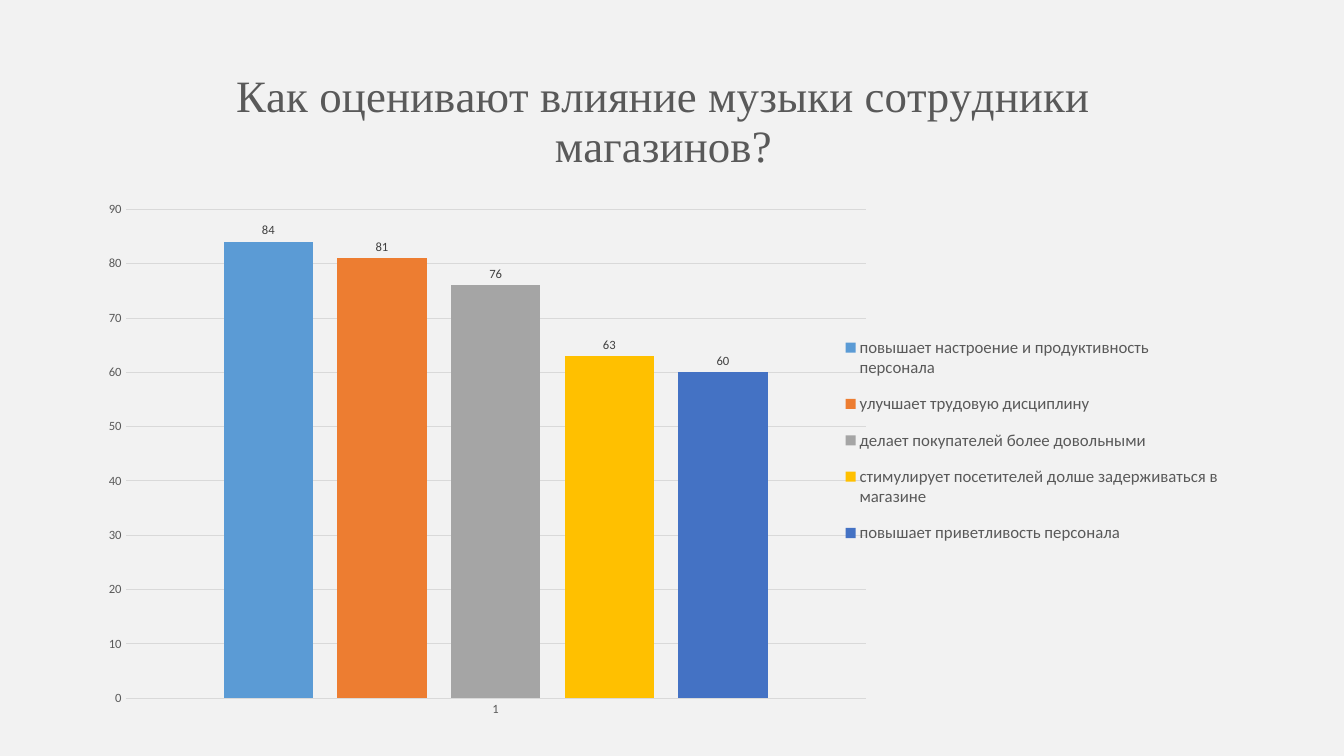
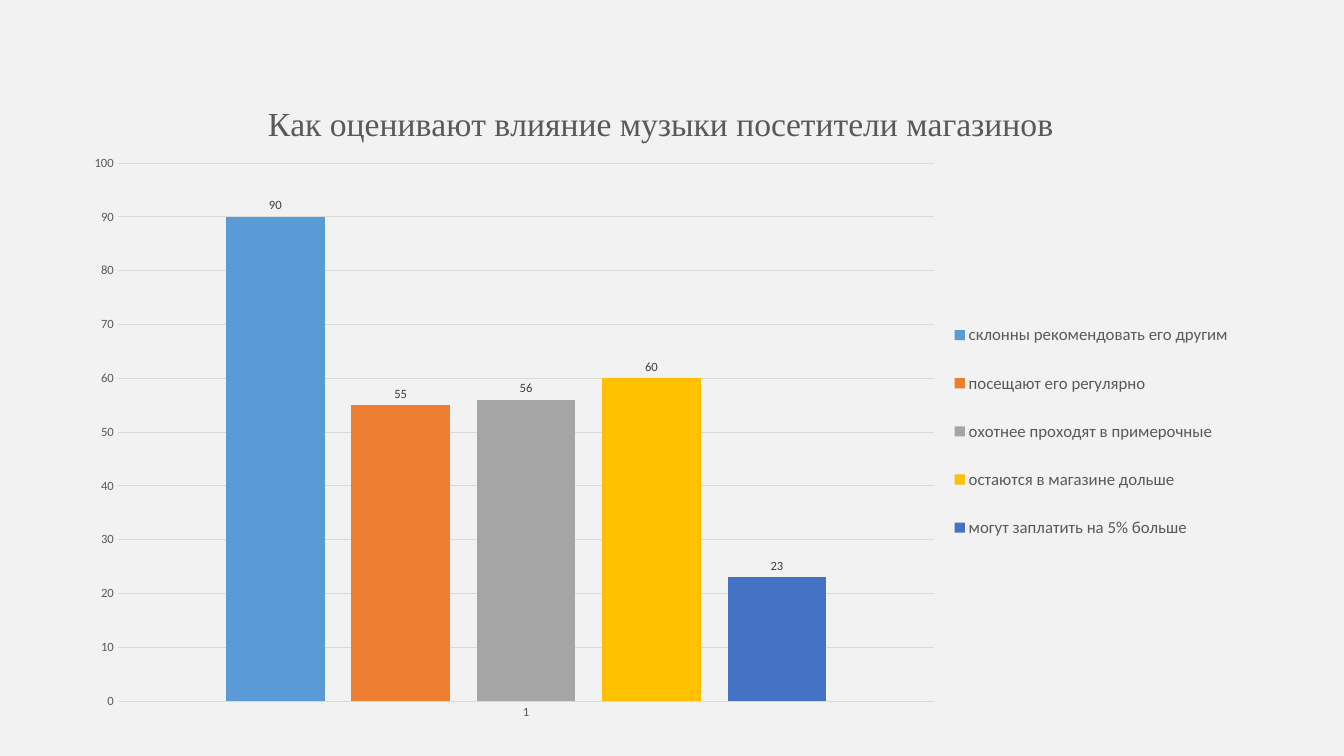
"""Builds two survey slides, each with one column chart on a light background."""
from pptx import Presentation
from pptx import util as u
from pptx.chart.data import CategoryChartData
from pptx.dml.color import RGBColor
from pptx.enum import chart as charts, shapes
from pptx.oxml import parse_xml
from pptx.oxml.ns import nsdecls, qn

COLUMNS, ROWS = 160, 90


def color(hex_string):
    """Turn a hex string into a colour."""
    return RGBColor.from_string(hex_string)


class SurveyDeck:
    """Holds the shared style and the current slide, on a 160 by 90 grid."""

    background, grid, muted, label = "F2F2F2", "D9D9D9", "595959", "404040"
    palette = ("5B9BD5", "ED7D31", "A5A5A5", "FFC000", "4472C4")
    body_font, title_font = "Calibri", "Times New Roman"

    def __init__(self):
        """Start an empty wide presentation."""
        self.presentation = Presentation()
        self.presentation.slide_width = u.Inches(13.33)
        self.presentation.slide_height = u.Inches(7.5)
        self.slide = None

    def box(self, left, top, width, height):
        """Turn columns and rows into slide lengths."""
        column = self.presentation.slide_width / COLUMNS
        row = self.presentation.slide_height / ROWS
        return [round(n * unit) for n, unit in
                zip((left, top, width, height), (column, row, column, row))]

    def style(self, font, size, hex_string, name=body_font):
        """Set the look of a font."""
        font.size, font.name, font.bold = u.Pt(size), name, False
        font.color.rgb = color(hex_string)

    def add_slide(self):
        """Add a blank slide with its background panel."""
        self.slide = self.presentation.slides.add_slide(self.presentation.slide_layouts[6])
        panel = self.slide.shapes.add_shape(
            shapes.MSO_SHAPE.RECTANGLE, *self.box(0, 0, COLUMNS, ROWS))
        panel.shadow.inherit = False
        panel.fill.solid()
        panel.fill.fore_color.rgb = color(self.background)
        panel.line.fill.background()

    def place(self, element, index, percents, target=""):
        """Place a chart part by percents of the chart's size."""
        for layout in element.findall(qn("c:layout")):
            element.remove(layout)
        values = "".join(f'<c:{tag} val="{percent / 100:.3f}"/>'
                         for tag, percent in zip("xywh", percents))
        element.insert(index, parse_xml(
            f'<c:layout {nsdecls("c")}><c:manualLayout>{target}'
            f'<c:xMode val="edge"/><c:yMode val="edge"/>{values}'
            '</c:manualLayout></c:layout>'))

    def add_title(self, chart, title, size):
        """Write the chart title."""
        chart.has_title = True
        chart.chart_title.include_in_layout = False
        run = chart.chart_title.text_frame.paragraphs[0].add_run()
        run.text = title
        self.style(run.font, size, self.muted, self.title_font)

    def add_axes(self, chart, maximum):
        """Style both axes and the gridlines."""
        for axis in (chart.category_axis, chart.value_axis):
            axis.major_tick_mark = axis.minor_tick_mark = charts.XL_TICK_MARK.NONE
            self.style(axis.tick_labels.font, 9, self.muted)
        values = chart.value_axis
        values.minimum_scale, values.maximum_scale, values.major_unit = 0, maximum, 10
        values.format.line.fill.background()
        values.has_major_gridlines = True
        for line in (chart.category_axis.format.line, values.major_gridlines.format.line):
            line.color.rgb = color(self.grid)
            line.width = u.Pt(0.75)

    def add_columns(self, chart):
        """Colour the columns and label their values."""
        plot = chart.plots[0]
        plot.gap_width, plot.overlap, plot.vary_by_categories = 219, -27, False
        for series, hex_string in zip(plot.series, self.palette):
            series.format.fill.solid()
            series.format.fill.fore_color.rgb = color(hex_string)
            labels = series.data_labels
            labels.show_value = True
            labels.position = charts.XL_LABEL_POSITION.OUTSIDE_END
            self.style(labels.font, 9, self.label)

    def add_legend(self, chart, percents):
        """Put the legend to the right of the columns."""
        chart.has_legend = True
        legend = chart.legend
        legend.position = charts.XL_LEGEND_POSITION.RIGHT
        legend.include_in_layout = False
        self.style(legend.font, 12, self.muted)
        self.place(legend._element, 1, percents)

    def add_chart(self, title, size, answers, maximum, area, plot, legend):
        """Draw the answers as one group of columns."""
        data = CategoryChartData()
        data.categories = ["1"]
        for answer, value in answers.items():
            data.add_series(answer, [value])
        chart = self.slide.shapes.add_chart(
            charts.XL_CHART_TYPE.COLUMN_CLUSTERED, *self.box(*area), data).chart
        self.style(chart.font, 10, "000000")
        self.add_title(chart, title, size)
        self.add_axes(chart, maximum)
        self.add_columns(chart)
        self.add_legend(chart, legend)
        plot_area = chart._chartSpace.find(".//" + qn("c:plotArea"))
        self.place(plot_area, 0, plot, '<c:layoutTarget val="inner"/>')


def main():
    """Build and save both slides."""
    deck = SurveyDeck()
    deck.add_slide()
    deck.add_chart(
        "Как оценивают влияние музыки сотрудники магазинов?", 32,
        {"повышает настроение и продуктивность персонала": 84,
         "улучшает трудовую дисциплину": 81,
         "делает покупателей более довольными": 76,
         "стимулирует посетителей долше задерживаться в магазине": 63,
         "повышает приветливость персонала": 60},
        maximum=90, area=(11, 4.8, 136, 82.2),
        plot=(2.9, 24.5, 64.8, 70.8), legend=(65.5, 40.7, 33.5, 34.5))
    deck.add_slide()
    deck.add_chart(
        "Как оценивают влияние музыки посетители магазинов", 24,
        {"склонны рекомендовать его другим": 90,
         "посещают его регулярно": 55,
         "охотнее проходят в примерочные": 56,
         "остаются в магазине дольше": 60,
         "могут заплатить на 5% больше": 23},
        maximum=100, area=(8.4, 9.2, 140.5, 78.1),
        plot=(4, 13.1, 69.2, 82), legend=(74, 33.5, 25, 41))
    deck.presentation.save("out.pptx")


if __name__ == "__main__":
    main()
